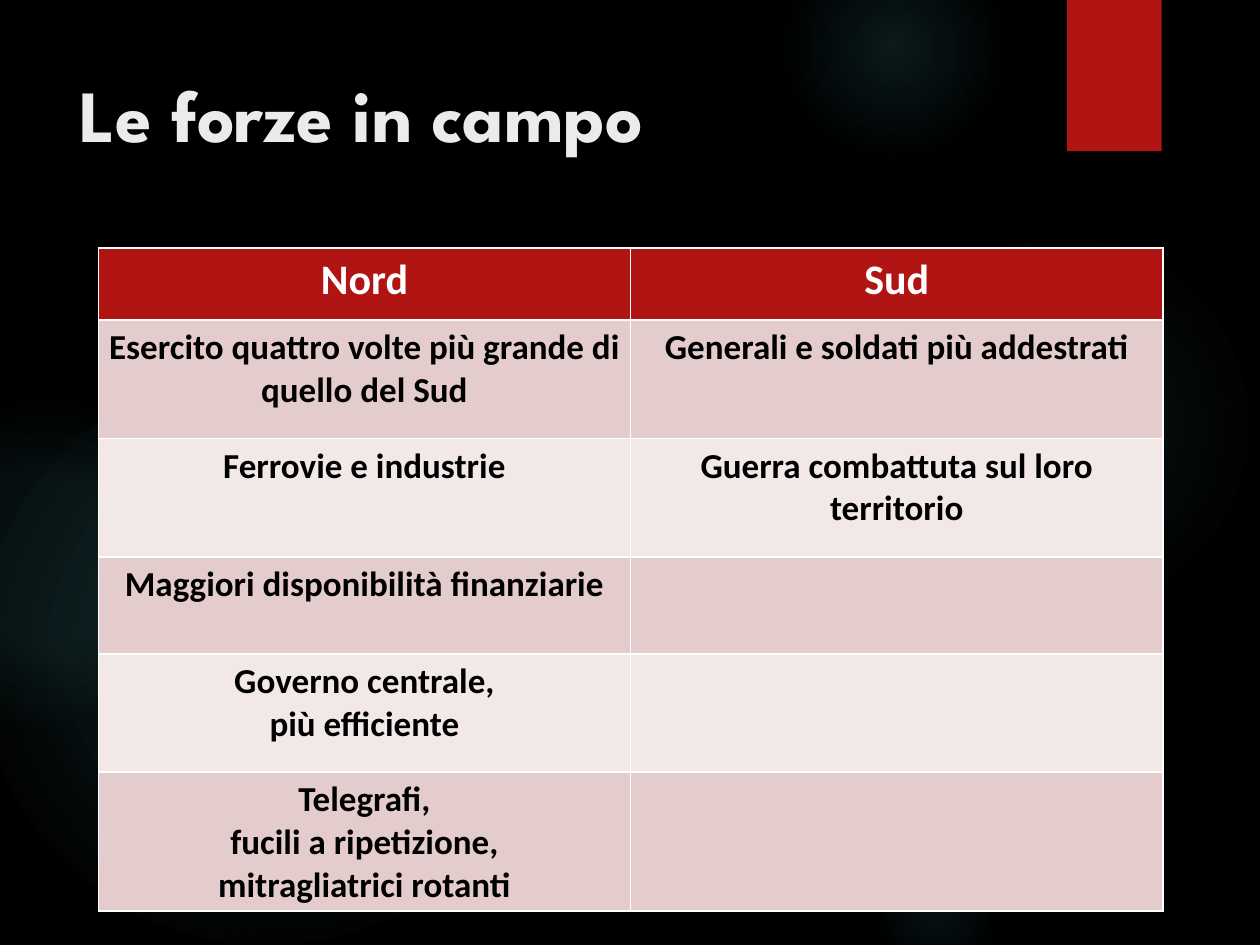
from lxml.etree import SubElement
from pptx import Presentation
from pptx.dml.color import RGBColor
from pptx.enum.shapes import MSO_SHAPE
from pptx.enum.text import MSO_ANCHOR, PP_ALIGN
from pptx.oxml import parse_xml
from pptx.oxml.ns import nsdecls, qn
from pptx.util import Inches, Pt

COLORS = {
    "background": "000000",
    "glow": "50B9C1",
    "accent": "B01513",
    "title": "EBEBEB",
    "white": "FFFFFF",
    "text": "000000",
    "dark_band": "E4CCCC",
    "light_band": "F2E8E7",
}

GLOWS = [
    (6.89, 1.83, 3.08, [(0, 7), (36, 6), (69, 0)]),
    (6.22, -0.5, 1.75, [(0, 14), (36, 7), (73, 0)]),
    (6.89, 6.67, 1.08, [(0, 9), (36, 5), (66, 0)]),
    (-0.17, 2.92, 4.58, [(0, 11), (36, 10), (75, 0)]),
    (-0.92, 3.17, 2.58, [(0, 8), (36, 8), (72, 0)]),
]

ROWS = [
    (0.57, "Nord", "Sud"),
    (0.94, "Esercito quattro volte più grande di quello del Sud",
     "Generali e soldati più addestrati"),
    (0.94, "Ferrovie e industrie", "Guerra combattuta sul loro territorio"),
    (0.77, "Maggiori disponibilità finanziarie", ""),
    (0.94, "Governo centrale,\npiù efficiente", ""),
    (1.1, "Telegrafi,\nfucili a ripetizione,\nmitragliatrici rotanti", ""),
]


def rgb(name):
    return RGBColor.from_string(COLORS[name])


def style_font(font, name, size, color):
    font.name = name
    font.size = Pt(size)
    font.bold = True
    font.color.rgb = rgb(color)


def add_glow(slide, left, top, diameter, stops):
    shape = slide.shapes.add_shape(
        MSO_SHAPE.OVAL, Inches(left), Inches(top), Inches(diameter), Inches(diameter))
    shape.shadow.inherit = False
    shape.line.fill.background()
    stop_xml = "".join(
        f'<a:gs pos="{position * 1000}"><a:srgbClr val="{COLORS["glow"]}">'
        f'<a:alpha val="{alpha * 1000}"/></a:srgbClr></a:gs>'
        for position, alpha in stops)
    gradient = parse_xml(
        f'<a:gradFill {nsdecls("a")}><a:gsLst>{stop_xml}</a:gsLst><a:path path="circle">'
        '<a:fillToRect l="50000" t="50000" r="50000" b="50000"/></a:path></a:gradFill>')
    shape._element.spPr.find(qn("a:prstGeom")).addnext(gradient)


def add_ribbon(slide):
    shape = slide.shapes.add_shape(
        MSO_SHAPE.RECTANGLE, Inches(8.47), Inches(0), Inches(0.75), Inches(1.2))
    shape.shadow.inherit = False
    shape.fill.solid()
    shape.fill.fore_color.rgb = rgb("accent")
    shape.line.fill.background()
    effects = shape._element.spPr.find(qn("a:effectLst"))
    effects.append(parse_xml(
        f'<a:outerShdw {nsdecls("a")} blurRad="{Pt(3)}" dist="{Pt(2)}" dir="5400000">'
        '<a:srgbClr val="000000"><a:alpha val="45000"/></a:srgbClr></a:outerShdw>'))


def add_title(slide, text):
    box = slide.shapes.add_textbox(Inches(0.53), Inches(0.5), Inches(7.72), Inches(1.53))
    text_frame = box.text_frame
    text_frame.word_wrap = True
    text_frame.vertical_anchor = MSO_ANCHOR.TOP
    text_frame.text = text
    style_font(text_frame.paragraphs[0].runs[0].font, "League Spartan", 42, "title")


def set_borders(cell):
    properties = cell._tc.get_or_add_tcPr()
    for index, side in enumerate(("lnL", "lnR", "lnT", "lnB")):
        line = parse_xml(f'<a:{side} {nsdecls("a")} w="{Pt(1)}"/>')
        fill = SubElement(line, qn("a:solidFill"))
        SubElement(fill, qn("a:srgbClr"), val=COLORS["white"])
        properties.insert(index, line)


def fill_cell(cell, text, fill, size, color):
    cell.fill.solid()
    cell.fill.fore_color.rgb = rgb(fill)
    cell.margin_left = cell.margin_right = Inches(0.08)
    cell.margin_top = cell.margin_bottom = Inches(0.05)
    set_borders(cell)
    cell.text_frame.text = text
    for paragraph in cell.text_frame.paragraphs:
        paragraph.alignment = PP_ALIGN.CENTER
        style_font(paragraph.font, "Calibri", size, color)
        for run in paragraph.runs:
            style_font(run.font, "Calibri", size, color)


def add_forces_table(slide):
    height = sum(row[0] for row in ROWS)
    table = slide.shapes.add_table(
        len(ROWS), 2, Inches(0.78), Inches(1.97), Inches(8.45), Inches(height)).table
    for row_index, (row_height, *texts) in enumerate(ROWS):
        table.rows[row_index].height = Inches(row_height)
        if row_index == 0:
            style = ("accent", 24, "white")
        else:
            style = ("dark_band" if row_index % 2 else "light_band", 20, "text")
        for column_index, text in enumerate(texts):
            fill_cell(table.cell(row_index, column_index), text, *style)


def main():
    presentation = Presentation()
    presentation.slide_width = Inches(10)
    presentation.slide_height = Inches(7.5)
    slide = presentation.slides.add_slide(presentation.slide_layouts[6])
    slide.background.fill.solid()
    slide.background.fill.fore_color.rgb = rgb("background")
    for glow in GLOWS:
        add_glow(slide, *glow)
    add_ribbon(slide)
    add_title(slide, "Le forze in campo")
    add_forces_table(slide)
    presentation.save("out.pptx")


if __name__ == "__main__":
    main()
